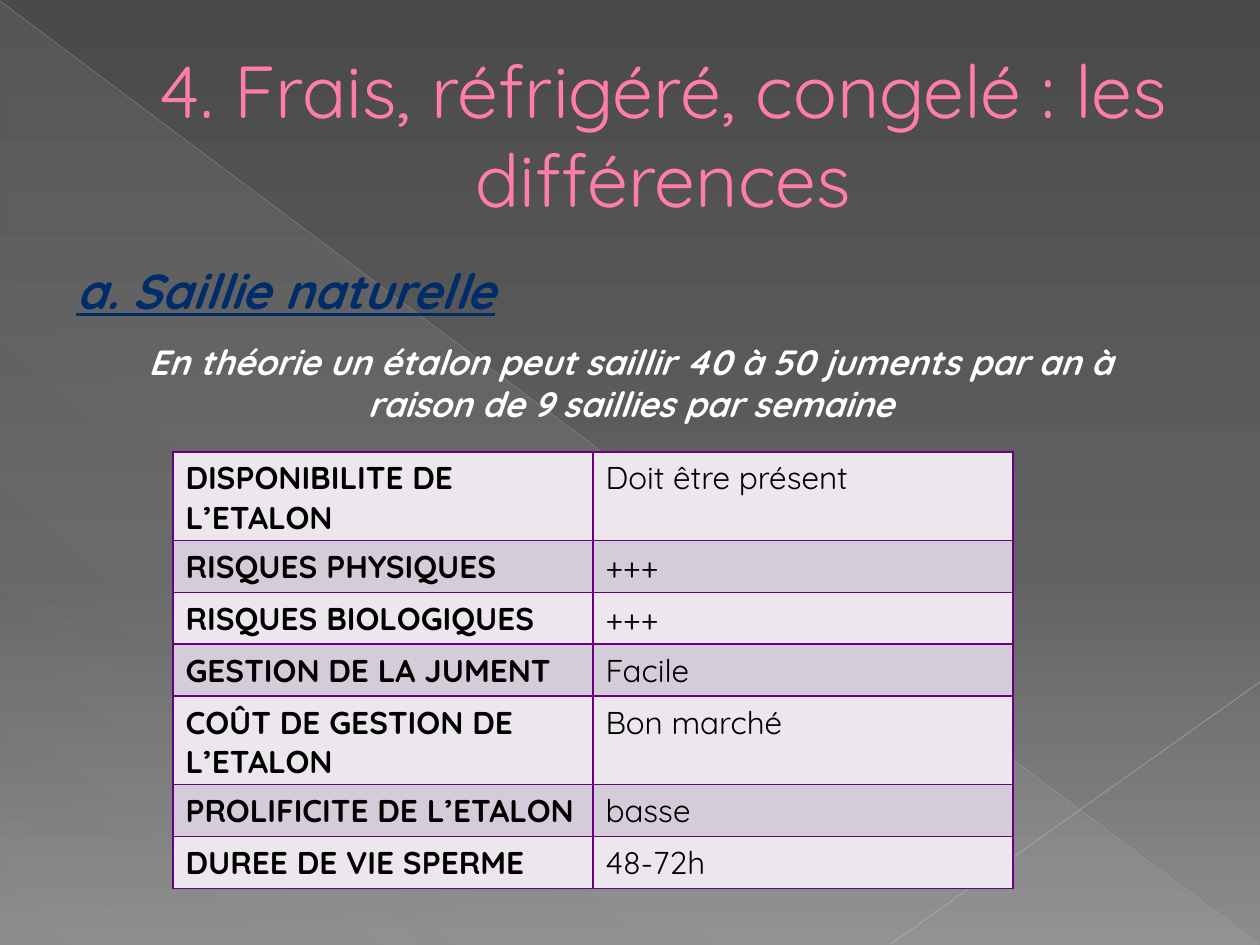
from pptx import Presentation
from pptx.dml.color import RGBColor
from pptx.enum.shapes import MSO_CONNECTOR, MSO_SHAPE
from pptx.enum.text import MSO_ANCHOR, MSO_AUTO_SIZE, PP_ALIGN
from pptx.oxml import parse_xml
from pptx.oxml.ns import nsdecls
from pptx.util import Pt

FONT = "Quicksand"
BACKGROUND = [(0, "4A4A4A", 100), (60, "626262", 100), (100, "8C8C8C", 100)]
SHEEN = [(0, "D2D2D2", 10), (70, "D2D2D2", 8), (100, "D2D2D2", 1)]
DIAGONALS = [
    ((0, 1, 1259, 944), "BFBFBF", 0.39, 35),
    ((1260, 682, 891, 944), "C6C6C6", 0.47, 45),
]
TITLE = "4. Frais, réfrigéré, congelé : les différences"
SUBTITLE = "a. Saillie naturelle"
THEORY = "En théorie un étalon peut saillir 40 à 50 juments par an à raison de 9 saillies par semaine"
ROWS = [
    ("DISPONIBILITE DE L’ETALON", "Doit être présent"),
    ("RISQUES PHYSIQUES", "+++"),
    ("RISQUES BIOLOGIQUES", "+++"),
    ("GESTION DE LA JUMENT", "Facile"),
    ("COÛT DE GESTION DE L’ETALON", "Bon marché"),
    ("PROLIFICITE DE L’ETALON", "basse"),
    ("DUREE DE VIE SPERME", "48-72h"),
]
BANDS = ["EBE7EC", "D4CCD8"]
BORDER = "68007F"
COL_W, ROW_H = 420, 52


def px(n):
    return round(n * 914400 / 126)


def rgb(color):
    return RGBColor.from_string(color)


def solid_xml(color, alpha=100):
    return (f'<a:solidFill><a:srgbClr val="{color}"><a:alpha val="{alpha * 1000}"/>'
            '</a:srgbClr></a:solidFill>')


def grad_xml(stops, angle):
    gs = "".join(f'<a:gs pos="{pos * 1000}"><a:srgbClr val="{color}">'
                 f'<a:alpha val="{alpha * 1000}"/></a:srgbClr></a:gs>'
                 for pos, color, alpha in stops)
    return (f'<a:gradFill {nsdecls("a")} rotWithShape="1"><a:gsLst>{gs}</a:gsLst>'
            f'<a:lin ang="{angle * 60000}" scaled="0"/></a:gradFill>')


def line_xml(tag, color, width):
    return parse_xml(f'<a:{tag} {nsdecls("a")} w="{Pt(width)}">{solid_xml(color)}</a:{tag}>')


def style(p, size, color, bold=False, italic=False, underline=False):
    for r in p.runs:
        f = r.font
        f.name, f.size, f.color.rgb = FONT, Pt(size), rgb(color)
        f.bold, f.italic, f.underline = bold, italic, underline


def add_text(s, box, text, size, color, align=PP_ALIGN.LEFT, **look):
    tf = s.shapes.add_textbox(*map(px, box)).text_frame
    tf.text, tf.word_wrap = text, True
    p = tf.paragraphs[0]
    p.alignment = align
    style(p, size, color, **look)
    return tf


def add_backdrop(s):
    s.element.cSld.insert(0, parse_xml(
        f'<p:bg {nsdecls("p", "a")}><p:bgPr>{grad_xml(BACKGROUND, 90)}'
        '<a:effectLst/></p:bgPr></p:bg>'))
    sp = s.shapes.add_shape(MSO_SHAPE.RIGHT_TRIANGLE, *map(px, (1, 2, 1258, 943)))
    sp.shadow.inherit = False
    sp.line.fill.background()
    sp.fill.background()
    pr = sp.element.spPr
    pr.replace(pr.find("{*}noFill"), parse_xml(grad_xml(SHEEN, 133)))
    for ends, color, width, alpha in DIAGONALS:
        ln = s.shapes.add_connector(MSO_CONNECTOR.STRAIGHT, *map(px, ends))
        ln.line.width = Pt(width)
        ln.line.color.rgb = rgb(color)
        clr = ln.element.spPr.find(".//{*}srgbClr")
        clr.append(parse_xml(f'<a:alpha {nsdecls("a")} val="{alpha * 1000}"/>'))
        ln.element.spPr.append(parse_xml(f'<a:effectLst {nsdecls("a")}/>'))


def add_comparison(s):
    box = (173, 452, 2 * COL_W, len(ROWS) * ROW_H)
    table = s.shapes.add_table(len(ROWS), 2, *map(px, box)).table
    for i, row in enumerate(ROWS):
        for j, text in enumerate(row):
            cell = table.cell(i, j)
            cell.text = text
            style(cell.text_frame.paragraphs[0], 18, "000000", bold=j == 0)
            pr = cell._tc.get_or_add_tcPr()
            for tag in ("lnL", "lnR", "lnT", "lnB"):
                pr.append(line_xml(tag, BORDER, 1))
            cell.fill.solid()
            cell.fill.fore_color.rgb = rgb(BANDS[i % 2])


def main():
    """Build the slide on natural covering and save it."""
    prs = Presentation()
    prs.slide_width, prs.slide_height = px(1260), px(945)
    s = prs.slides.add_slide(prs.slide_layouts[6])
    add_backdrop(s)

    tf = add_text(s, (63, 37, 1134, 193), TITLE, 42, "FF7DA7", PP_ALIGN.CENTER)
    tf.vertical_anchor = MSO_ANCHOR.MIDDLE
    p = tf.paragraphs[0]
    ppr = p._p.get_or_add_pPr()
    ppr.set("marL", str(px(67)))
    ppr.set("indent", "0")
    p.runs[0].font._element.insert(0, line_xml("ln", "B12761", 0.5))

    for tf in (
        add_text(s, (64, 254, 863, 72), SUBTITLE, 28, "002D6A",
                 bold=True, italic=True, underline=True),
        add_text(s, (115, 334, 1032, 97), THEORY, 20, "FFFFFF", PP_ALIGN.CENTER,
                 bold=True, italic=True),
    ):
        tf.auto_size = MSO_AUTO_SIZE.SHAPE_TO_FIT_TEXT
    add_comparison(s)
    prs.save("out.pptx")


if __name__ == "__main__":
    main()
